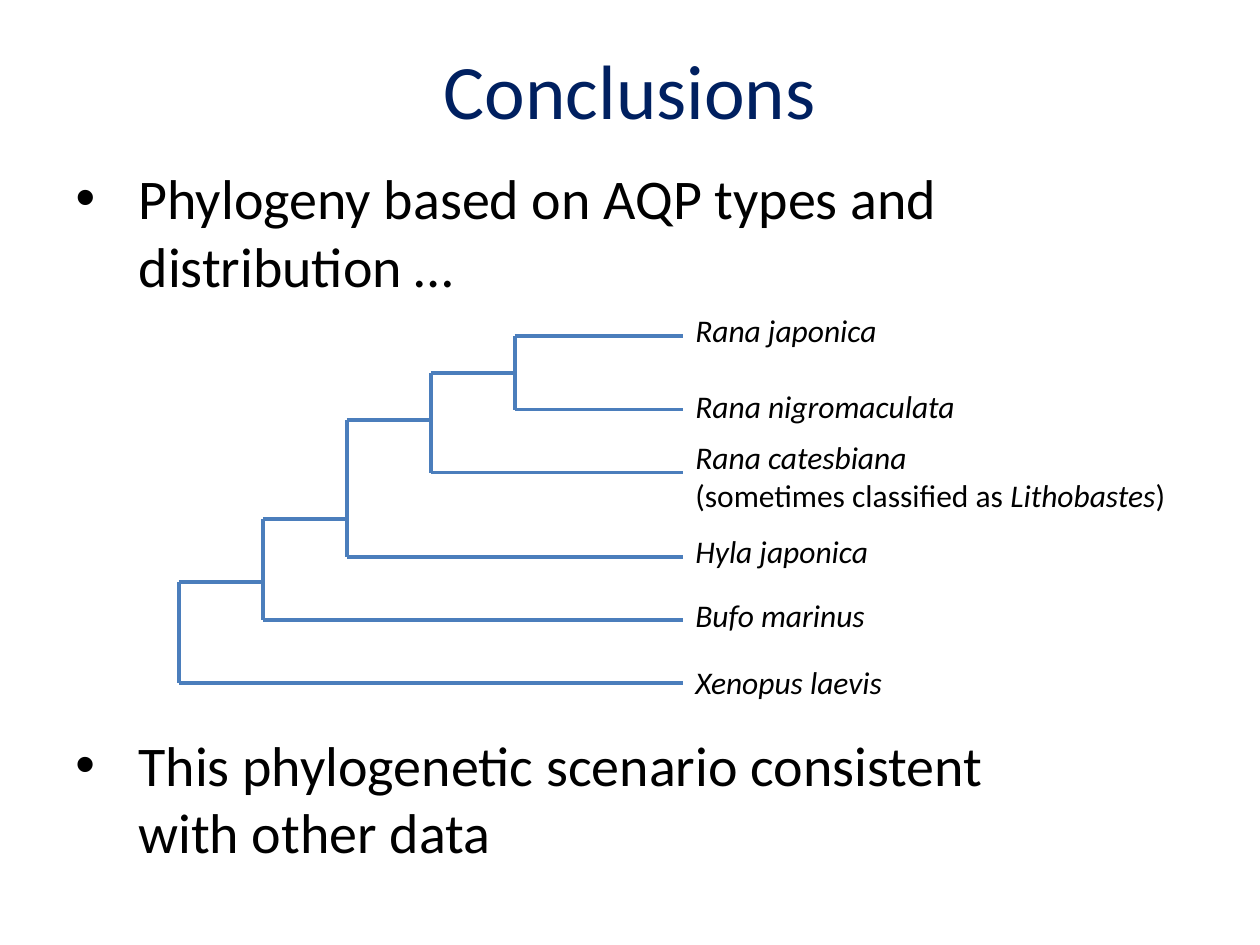
from lxml import etree
from pptx import Presentation
from pptx.dml.color import RGBColor
from pptx.enum.shapes import MSO_CONNECTOR
from pptx.enum.text import MSO_ANCHOR, MSO_AUTO_SIZE, PP_ALIGN
from pptx.oxml.ns import qn
from pptx.util import Inches, Pt

NAVY = RGBColor(0x00, 0x20, 0x60)
BLACK = RGBColor(0, 0, 0)
BRANCH = RGBColor(0x4B, 0x7E, 0xBC)

TITLE = "Conclusions"
FIRST_POINT = "Phylogeny based on AQP types and distribution …"
LAST_POINT = "This phylogenetic scenario consistent with other data"

# Species labels: top, width, height, paragraphs of (text, italic) runs
SPECIES = [
    (2.42, 1.66, 0.4, [[("Rana japonica", True)]]),
    (3.02, 2.28, 0.4, [[("Rana nigromaculata", True)]]),
    (3.43, 3.98, 0.71, [[("Rana catesbiana", True)],
                        [("(sometimes classified as ", False),
                         ("Lithobastes", True), (")", False)]]),
    (4.17, 1.59, 0.4, [[("Hyla japonica", True)]]),
    (4.68, 1.56, 0.4, [[("Bufo marinus", True)]]),
    (5.21, 1.7, 0.4, [[("Xenopus laevis", True)]]),
]

# Forks from the root outwards: height of upper and lower branch
FORKS = [(4.62, 5.42), (4.12, 4.92), (3.33, 4.42), (2.96, 3.75), (2.67, 3.25)]
ROOT_X, TIP_X = 1.42, 5.42
STEP = (TIP_X - ROOT_X) / (len(FORKS) + 1)


def place(sp, left, top, width, height):
    sp.left, sp.top = Inches(left), Inches(top)
    sp.width, sp.height = Inches(width), Inches(height)


def add_run(p, text, size=32, color=BLACK, italic=False):
    r = p.add_run()
    r.text = text
    r.font.name = "Calibri"
    r.font.size = Pt(size)
    r.font.color.rgb = color
    r.font.italic = italic


def add_bullet(p):
    ppr = p._p.get_or_add_pPr()
    ppr.set("marL", str(Inches(0.5)))
    ppr.set("indent", str(Inches(-0.5)))
    etree.SubElement(ppr, qn("a:buFont")).set("typeface", "Arial")
    etree.SubElement(ppr, qn("a:buChar")).set("char", "•")


def add_textbox(slide, left, top, width, height, wrap):
    tf = slide.shapes.add_textbox(*map(Inches, (left, top, width, height))).text_frame
    tf.word_wrap = wrap
    tf.auto_size = MSO_AUTO_SIZE.SHAPE_TO_FIT_TEXT
    return tf


def add_branch(slide, x1, y1, x2, y2):
    line = slide.shapes.add_connector(
        MSO_CONNECTOR.STRAIGHT, *map(Inches, (x1, y1, x2, y2)))
    line.line.color.rgb = BRANCH
    line.line.width = Pt(2.25)
    etree.SubElement(line._element.spPr, qn("a:effectLst"))


def main():
    prs = Presentation()
    prs.slide_width, prs.slide_height = Inches(10), Inches(7.5)
    slide = prs.slides.add_slide(prs.slide_layouts[1])

    # Title and first point
    title, body = slide.placeholders
    place(title, 0.5, 0.08, 9, 1.25)
    title.text_frame.vertical_anchor = MSO_ANCHOR.MIDDLE
    p = title.text_frame.paragraphs[0]
    p.alignment = PP_ALIGN.CENTER
    add_run(p, TITLE, size=44, color=NAVY)

    place(body, 0.5, 1.25, 9.17, 6.08)
    p = body.text_frame.paragraphs[0]
    add_bullet(p)
    add_run(p, FIRST_POINT)

    # Tree: each upper branch ends at the next fork, each lower one at a tip
    for i, (upper, lower) in enumerate(FORKS):
        x = ROOT_X + i * STEP
        end = TIP_X if i == len(FORKS) - 1 else x + STEP
        add_branch(slide, x, upper, end, upper)
        add_branch(slide, x, lower, x, upper)
        add_branch(slide, x, lower, TIP_X, lower)

    # Species labels
    for top, width, height, paragraphs in SPECIES:
        tf = add_textbox(slide, TIP_X, top, width, height, wrap=False)
        for i, runs in enumerate(paragraphs):
            p = tf.add_paragraph() if i else tf.paragraphs[0]
            for text, italic in runs:
                add_run(p, text, size=18, italic=italic)

    # Last point
    p = add_textbox(slide, 0.5, 5.75, 8.24, 1.18, wrap=True).paragraphs[0]
    add_bullet(p)
    add_run(p, LAST_POINT)

    prs.save("out.pptx")


if __name__ == "__main__":
    main()
